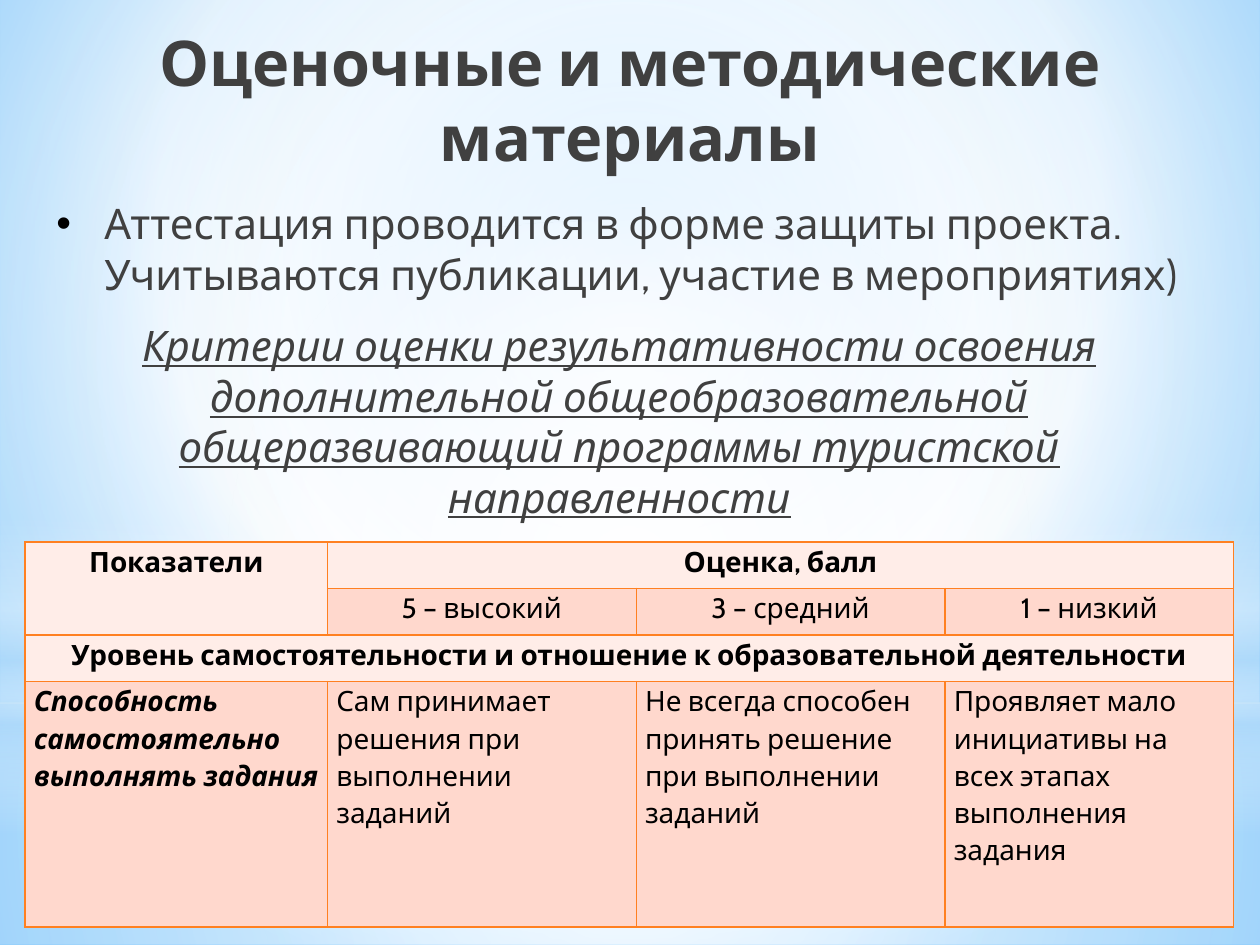
import pptx
import pptx.util
import pptx.dml.color
import pptx.enum.shapes
import pptx.enum.text
import pptx.oxml
import pptx.oxml.ns
from lxml import etree

Inches = pptx.util.Inches
Pt = pptx.util.Pt
RGB = pptx.dml.color.RGBColor.from_string
qn = pptx.oxml.ns.qn
SHAPE = pptx.enum.shapes.MSO_SHAPE
ALIGN = pptx.enum.text.PP_ALIGN
ANCHOR = pptx.enum.text.MSO_ANCHOR

THEME = {
    "font": "Cabin", "title": Pt(36), "body": Pt(24), "cell": Pt(16),
    "text": "404040", "black": "000000", "white": "FFFFFF", "sky": "B4DCFA",
    "border": "FF8021", "head_fill": "FFEDE8", "cell_fill": "FFD8CD",
}
WHITE, SKY = THEME["white"], THEME["sky"]
CENTRE = (50, 50, 50, 50)


def set_gradient(fill, owner, stops, focus=None, angle=90):
    """Fill with (position, colour, opacity) stops: radial round focus, else linear."""
    fill.gradient()
    grad = owner.find(".//" + qn("a:gradFill"))
    for child in list(grad):
        grad.remove(child)
    gs_list = etree.SubElement(grad, qn("a:gsLst"))
    for pos, colour, opacity in stops:
        gs = etree.SubElement(gs_list, qn("a:gs"), pos=str(pos * 1000))
        clr = etree.SubElement(gs, qn("a:srgbClr"), val=colour)
        if opacity < 100:
            etree.SubElement(clr, qn("a:alpha"), val=str(opacity * 1000))
    if focus:
        path = etree.SubElement(grad, qn("a:path"), path="circle")
        sides = {side: str(v * 1000) for side, v in zip("ltrb", focus)}
        etree.SubElement(path, qn("a:fillToRect"), **sides)
    else:
        etree.SubElement(grad, qn("a:lin"), ang=str(angle * 60000), scaled="0")


def add_text(p, text, size, colour, **formats):
    r = p.add_run()
    r.text = text
    r.font.color.rgb = RGB(colour)
    for name, value in {"name": THEME["font"], "size": size, **formats}.items():
        setattr(r.font, name, value)
    return r


prs = pptx.Presentation()
prs.slide_width, prs.slide_height = Inches(10), Inches(7.5)
s = prs.slides.add_slide(prs.slide_layouts[5])

# Sky background with soft light over it
set_gradient(s.background.fill, s._element,
             [(0, "9ED5FF", 100), (60, WHITE, 100), (100, "5BB9FF", 100)],
             focus=(20, 10, 20, 60))
washes = [
    (SHAPE.RECTANGLE, 5.58, 1.92, CENTRE,
     [(0, WHITE, 91), (37, WHITE, 76), (100, SKY, 79)]),
    (SHAPE.RECTANGLE, 0, 5.58, CENTRE,
     [(0, WHITE, 89), (48, WHITE, 62), (100, SKY, 79)]),
    (SHAPE.RECTANGLE, 4.12, 2.5, None,
     [(0, WHITE, 0), (29, WHITE, 30), (45, SKY, 40), (55, WHITE, 26),
      (65, SKY, 60), (100, WHITE, 0)]),
    (SHAPE.OVAL, 1.75, 5.58, CENTRE, [(0, WHITE, 100), (56, WHITE, 0)]),
]
for kind, top, height, focus, stops in washes:
    sp = s.shapes.add_shape(kind, 0, Inches(top), prs.slide_width, Inches(height))
    sp.shadow.inherit = False
    sp.line.fill.background()
    set_gradient(sp.fill, sp._element.spPr, stops, focus)

# Title, brought in front of the washes
title = s.shapes.title
s.shapes._spTree.append(title._element)
title.left, title.top = 0, Inches(0.21)
title.width, title.height = prs.slide_width, Inches(1.15)
tf = title.text_frame
tf.word_wrap = True
tf.auto_size = pptx.enum.text.MSO_AUTO_SIZE.NONE
tf.vertical_anchor = ANCHOR.MIDDLE
for i, line in enumerate(["Оценочные и методические", "материалы"]):
    p = tf.add_paragraph() if i else tf.paragraphs[0]
    p.alignment = ALIGN.CENTER
    add_text(p, line, THEME["title"], THEME["text"], bold=True)

# Introduction and table heading
blocks = [
    (1.52, 1.05, "Аттестация проводится в форме защиты проекта. "
     "Учитываются публикации, участие в мероприятиях)", True, {}),
    (2.49, 1.65, "Критерии оценки результативности освоения дополнительной "
     "общеобразовательной общеразвивающий программы туристской направленности",
     False, {"italic": True, "underline": True}),
]
for top, height, text, bulleted, formats in blocks:
    sp = s.shapes.add_textbox(Inches(0.35), Inches(top), Inches(9.13), Inches(height))
    tf = sp.text_frame
    tf.word_wrap = True
    p = tf.paragraphs[0]
    add_text(p, text, THEME["body"], THEME["text"], **formats)
    if bulleted:
        pPr = p._p.get_or_add_pPr()
        pPr.set("marL", str(Inches(0.38)))
        pPr.set("indent", str(-Inches(0.38)))
        bullet_colour = etree.SubElement(pPr, qn("a:buClr"))
        etree.SubElement(bullet_colour, qn("a:srgbClr"), val=THEME["black"])
        etree.SubElement(pPr, qn("a:buFont"), typeface="Arial")
        etree.SubElement(pPr, qn("a:buChar"), char="•")
    else:
        p.alignment = ALIGN.CENTER

# Criteria table
BOLD = {"bold": True}
BOLD_ITALIC = {"bold": True, "italic": True}
rows = [
    (0.37, "head_fill", [BOLD] * 4, ["Показатели", "Оценка, балл", "", ""]),
    (0.37, "cell_fill", [{}] * 4, ["", "5 – высокий", "3 – средний", "1 – низкий"]),
    (0.37, "head_fill", [BOLD] * 4,
     ["Уровень самостоятельности и отношение к образовательной деятельности",
      "", "", ""]),
    (1.95, "cell_fill", [BOLD_ITALIC, {}, {}, {}],
     ["Способность самостоятельно\nвыполнять задания",
      "Сам принимает решения при выполнении\nзаданий",
      "Не всегда способен принять решение при выполнении заданий",
      "Проявляет мало инициативы на всех этапах выполнения задания"]),
]
widths = [2.4, 2.45, 2.45, 2.29]
table = s.shapes.add_table(len(rows), len(widths), Inches(0.2), Inches(4.3),
                           Inches(sum(widths)), Inches(3.07)).table
for column, width in zip(table.columns, widths):
    column.width = Inches(width)
for (r1, c1), (r2, c2) in [((0, 0), (1, 0)), ((0, 1), (0, 3)), ((2, 0), (2, 3))]:
    table.cell(r1, c1).merge(table.cell(r2, c2))

cell_format = {"margin_left": Inches(0.07), "margin_right": Inches(0.07),
               "margin_top": 0, "margin_bottom": 0}
for i, (height, fill, formats, texts) in enumerate(rows):
    table.rows[i].height = Inches(height)
    for j, text in enumerate(texts):
        cell = table.cell(i, j)
        for name, value in cell_format.items():
            setattr(cell, name, value)
        tcPr = cell._tc.get_or_add_tcPr()
        for side in ("lnL", "lnR", "lnT", "lnB"):
            ln = etree.SubElement(tcPr, qn("a:" + side), w=str(Pt(1)))
            solid = etree.SubElement(ln, qn("a:solidFill"))
            etree.SubElement(solid, qn("a:srgbClr"), val=THEME["border"])
        cell.fill.solid()
        cell.fill.fore_color.rgb = RGB(THEME[fill])
        if not text:
            continue
        tf = cell.text_frame
        for k, line in enumerate(text.split("\n")):
            p = tf.add_paragraph() if k else tf.paragraphs[0]
            p.line_spacing = 1.1
            p.alignment = ALIGN.LEFT if i == len(rows) - 1 else ALIGN.CENTER
            add_text(p, line, THEME["cell"], THEME["black"],
                     **{"bold": False, **formats[j]})

prs.save("out.pptx")
